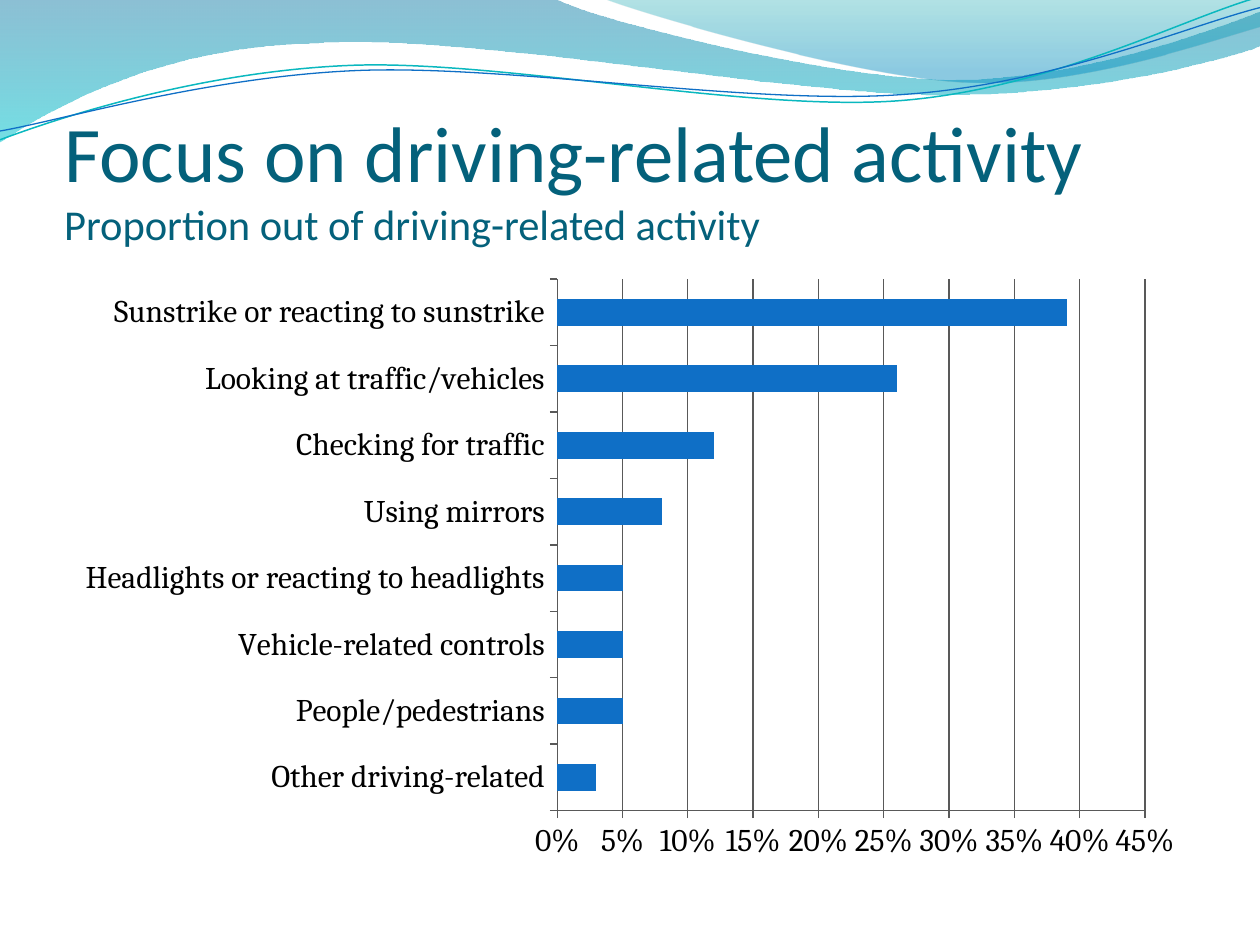
from math import cos, radians, sin

from lxml import etree
from pptx import Presentation
from pptx.chart.data import CategoryChartData
from pptx.dml.color import RGBColor
from pptx.enum.chart import XL_CHART_TYPE, XL_TICK_MARK
from pptx.enum.text import MSO_ANCHOR, MSO_AUTO_SIZE, PP_ALIGN
from pptx.oxml.ns import qn
from pptx.util import Inches, Pt

BAR = XL_CHART_TYPE.BAR_CLUSTERED
OUTSIDE = XL_TICK_MARK.OUTSIDE

COLORS = {
    "title": "04617B", "bar": "0F6FC6", "text": "000000", "axis": "595959",
    "teal_line": "0AB8BF", "blue_line": "0F6FC6",
}

TITLE_LINES = [
    ("Focus on driving-related activity", 45),
    ("Proportion out of driving-related activity", 24.3),
]

# Listed from the bottom of the chart upwards
ACTIVITIES = [
    ("Other driving-related", 0.03),
    ("People/pedestrians", 0.05),
    ("Vehicle-related controls", 0.05),
    ("Headlights or reacting to headlights", 0.05),
    ("Using mirrors", 0.08),
    ("Checking for traffic", 0.12),
    ("Looking at traffic/vehicles", 0.26),
    ("Sunstrike or reacting to sunstrike", 0.39),
]

# Each outline is a box (left, top, width, height) and segments in inches:
# a pair is a line end, a six-tuple is a cubic curve.
# Gradient stops are (position, colour, opacity %).
BANDS = [
    ((-0.01, -0.01, 10.02, 1.14),
     [(0, 0), (4.4, -0.01), (4.76, 0.17, 6.64, 0.63, 7.58, 0.63),
      (8.53, 0.63, 9.58, 0.26, 10, 0.09), (10.01, 0.36),
      (9.83, 0.44, 8.7, 0.76, 7.46, 0.75), (6.22, 0.75, 3.82, 0.28, 2.57, 0.34),
      (1.29, 0.36, 0.46, 0.83, -0.01, 1.13), (0, 0)],
     [(0, "0074A1", 45), (1, "00C6CF", 55)]),
    ((4.79, -0.01, 5.21, 0.7),
     [(4.79, -0.01), (5.09, 0.11, 6.82, 0.62, 7.69, 0.65),
      (8.56, 0.69, 9.61, 0.32, 10, 0.21), (10, 0), (4.79, -0.01)],
     [(0, "00A1A9", 30), (0.8, "008BBF", 45)]),
]
WAVES = [
    ((-0.02, 0.22, 10.02, 0.71),
     [(0, 1.11), (0.48, 0.93, 1.58, 0.57, 2.77, 0.52),
      (3.95, 0.47, 5.93, 0.89, 7.13, 0.8), (8.33, 0.71, 9.38, 0.15, 9.98, -0.02)],
     "teal_line", 0.85),
    ((-0.02, 0.3, 10.03, 0.58),
     [(0, 1.04), (0.47, 0.96, 1.64, 0.61, 2.83, 0.56),
      (4.03, 0.51, 5.97, 0.84, 7.17, 0.75), (8.36, 0.67, 9.41, 0.21, 10, 0.06)],
     "blue_line", 0.75),
]
WAVE_TILT = -2.7


def rgb(name):
    return RGBColor.from_string(COLORS[name])


def format_with(target, values):
    for attribute, value in values.items():
        setattr(target, attribute, value)


def draw_outline(shapes, box, segments, close, tilt=0):
    """Draw lines and curves in a box; segments show the tilted position."""
    left, top, width, height = box
    right, bottom = left + width, top + height
    corners = [(Inches(x), Inches(y)) for x, y in
               ((left, top), (right, top), (right, bottom), (left, bottom))]
    builder = shapes.build_freeform(*corners[0])
    builder.add_line_segments(corners[1:], close=close)
    shape = builder.convert_to_shape()
    shape.rotation = tilt
    shape.shadow.inherit = False

    outline = next(shape._element.iter(qn("a:path")))
    for corner in list(outline):
        outline.remove(corner)
    turn = radians(-tilt)
    for index, segment in enumerate(segments):
        kind = "moveTo" if index == 0 else "lnTo" if len(segment) == 2 else "cubicBezTo"
        node = etree.SubElement(outline, qn(f"a:{kind}"))
        for x, y in zip(segment[::2], segment[1::2]):
            dx, dy = x - left - width / 2, y - top - height / 2
            local_x = dx * cos(turn) - dy * sin(turn) + width / 2
            local_y = dx * sin(turn) + dy * cos(turn) + height / 2
            etree.SubElement(node, qn("a:pt"), x=str(int(Inches(local_x))),
                             y=str(int(Inches(local_y))))
    if close:
        etree.SubElement(outline, qn("a:close"))
    return shape


def add_header(slide):
    for box, segments, stops in BANDS:
        band = draw_outline(slide.shapes, box, segments, True)
        band.line.fill.background()
        band.fill.gradient()
        band.fill.gradient_angle = 270
        for stop, (position, color, _) in zip(band.fill.gradient_stops, stops):
            stop.position = position
            stop.color.rgb = RGBColor.from_string(color)
        for node, (_, _, opacity) in zip(band._element.iter(qn("a:srgbClr")), stops):
            etree.SubElement(node, qn("a:alpha"), val=str(opacity * 1000))
    waves = slide.shapes.add_group_shape()
    for box, segments, color, width in WAVES:
        wave = draw_outline(waves.shapes, box, segments, False, WAVE_TILT)
        wave.fill.background()
        wave.line.color.rgb = rgb(color)
        wave.line.width = Pt(width)


def add_title(slide):
    title = slide.shapes.title
    format_with(title, {"left": Inches(0.51), "top": Inches(0.73),
                        "width": Inches(9), "height": Inches(1.25)})
    format_with(title.text_frame, {
        "margin_left": 0, "margin_right": 0, "margin_top": Inches(0.05),
        "margin_bottom": 0, "vertical_anchor": MSO_ANCHOR.BOTTOM,
        "auto_size": MSO_AUTO_SIZE.NONE, "word_wrap": True})
    heading = title.text_frame.paragraphs[0]
    heading.alignment = PP_ALIGN.LEFT
    for index, (text, size) in enumerate(TITLE_LINES):
        if index:
            heading.add_line_break()
        line = heading.add_run()
        line.text = text
        format_with(line.font, {"size": Pt(size), "name": "Calibri"})
        line.font.color.rgb = rgb("title")
    # Bring the title in front of the header bands
    slide.shapes._spTree.append(title._element)


def add_activity_chart(slide):
    data = CategoryChartData(number_format="0%")
    data.categories = [activity for activity, _ in ACTIVITIES]
    data.add_series("Series 1", [share for _, share in ACTIVITIES])
    chart = slide.shapes.add_chart(
        BAR, Inches(0.5), Inches(2.12), Inches(9), Inches(4.8), data).chart
    format_with(chart, {"has_legend": False, "has_title": False})
    format_with(chart.font, {"size": Pt(18), "name": "Cambria"})
    chart.font.color.rgb = rgb("text")

    plot = chart.plots[0]
    format_with(plot, {"gap_width": 150, "vary_by_categories": False})
    bars = plot.series[0].format.fill
    bars.solid()
    bars.fore_color.rgb = rgb("bar")

    shares = chart.value_axis
    format_with(shares, {"minimum_scale": 0, "maximum_scale": 0.45,
                         "major_unit": 0.05, "has_major_gridlines": True})
    format_with(shares.tick_labels, {"number_format": "0%",
                                     "number_format_is_linked": False})
    for axis in (chart.category_axis, shares):
        axis.major_tick_mark = OUTSIDE
    for part in (chart.category_axis, shares, shares.major_gridlines):
        part.format.line.color.rgb = rgb("axis")
        part.format.line.width = Pt(0.75)


def main():
    deck = Presentation()
    format_with(deck, {"slide_width": Inches(10), "slide_height": Inches(7.5)})
    slide = deck.slides.add_slide(deck.slide_layouts[5])
    add_header(slide)
    add_title(slide)
    add_activity_chart(slide)
    deck.save("out.pptx")


if __name__ == "__main__":
    main()
